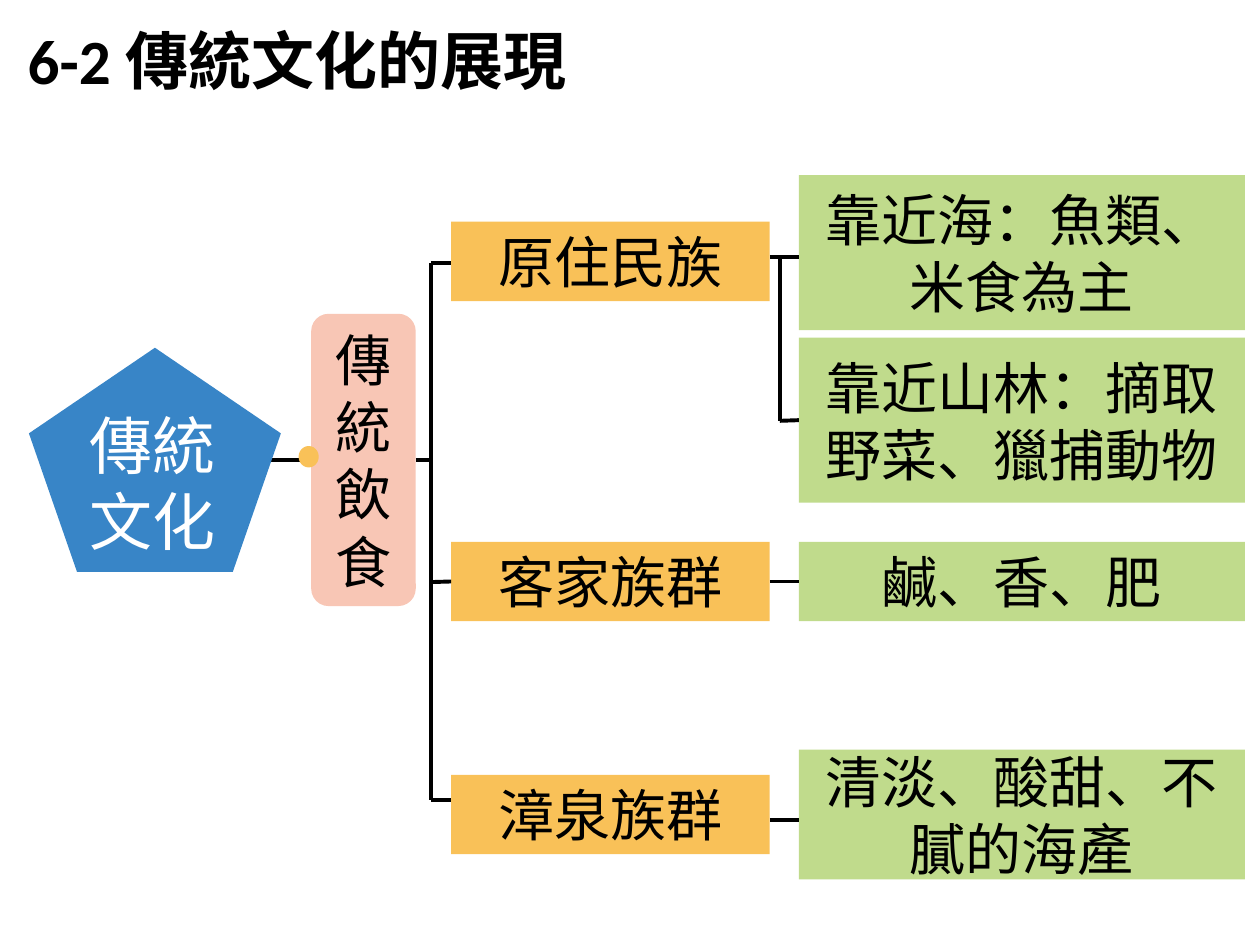
from dataclasses import dataclass

from lxml import etree
from pptx import Presentation
from pptx.dml.color import RGBColor as RGB
from pptx.enum.shapes import MSO_CONNECTOR as CONN, MSO_SHAPE as SHAPE
from pptx.enum.text import MSO_ANCHOR as ANCHOR, MSO_AUTO_SIZE as FIT, PP_ALIGN as ALIGN
from pptx.oxml.ns import qn
from pptx.util import Inches, Pt


@dataclass(frozen=True)
class Theme:
    black: str = "000000"
    white: str = "FFFFFF"
    blue: str = "3885C7"
    pink: str = "F8C6B5"
    orange: str = "F9C158"
    green: str = "C0DB8C"
    latin: str = "Calibri"
    cjk: str = "Noto Sans CJK SC"
    large: int = 36
    body: int = 32
    line: float = 2.25


T = Theme()


def add_text(sp, text, size=T.body, color=T.black, font=T.cjk, bold=False,
             align=ALIGN.CENTER, anchor=ANCHOR.MIDDLE):
    tf = sp.text_frame
    tf.vertical_anchor = anchor
    p = tf.paragraphs[0]
    p.alignment = align
    r = p.add_run()
    r.text = text
    r.font.size = Pt(size)
    r.font.bold = bold
    r.font.name = font
    r.font.color.rgb = RGB.from_string(color)
    latin = r.font._element.find(qn("a:latin"))
    ea = etree.Element(qn("a:ea"), typeface=T.cjk)
    latin.addnext(ea)


def add_line(x1, y1, x2, y2, begin=None, end=None):
    c = s.shapes.add_connector(CONN.STRAIGHT, Inches(x1), Inches(y1), Inches(x2), Inches(y2))
    c.line.color.rgb = RGB.from_string(T.black)
    c.line.width = Pt(T.line)
    etree.SubElement(c._element.spPr, qn("a:effectLst"))
    if begin is not None:
        c.begin_connect(begin, 3)
    if end is not None:
        c.end_connect(end, 1)


prs = Presentation()
prs.slide_width, prs.slide_height = Inches(10), Inches(7.5)
s = prs.slides.add_slide(prs.slide_layouts[5])

title = s.shapes.title
title.left, title.top = Inches(0.12), Inches(0.12)
title.width, title.height = Inches(4.6), Inches(0.71)
title.text_frame.word_wrap = False
title.text_frame.auto_size = FIT.SHAPE_TO_FIT_TEXT
for text, font in (("6-2 ", T.latin), ("傳統文化的展現", T.cjk)):
    add_text(title, text, size=T.large, font=font, bold=True, align=ALIGN.LEFT, anchor=ANCHOR.TOP)

group_x, group_w, group_h = 3.58, 2.53, 0.63
detail_x, detail_w = 6.34, 3.54
boxes = {}
for text, x, y, w, h, kind, fill in (
    ("傳統飲食", 2.47, 2.49, 0.83, 2.32, SHAPE.ROUNDED_RECTANGLE, T.pink),
    ("原住民族", group_x, 1.76, group_w, group_h, SHAPE.RECTANGLE, T.orange),
    ("客家族群", group_x, 4.3, group_w, group_h, SHAPE.RECTANGLE, T.orange),
    ("漳泉族群", group_x, 6.15, group_w, group_h, SHAPE.RECTANGLE, T.orange),
    ("靠近海：魚類、米食為主", detail_x, 1.39, detail_w, 1.23, SHAPE.RECTANGLE, T.green),
    ("靠近山林：摘取野菜、獵捕動物", detail_x, 2.68, detail_w, 1.31, SHAPE.RECTANGLE, T.green),
    ("鹹、香、肥", detail_x, 4.3, detail_w, group_h, SHAPE.RECTANGLE, T.green),
    ("清淡、酸甜、不膩的海產", detail_x, 5.95, detail_w, 1.03, SHAPE.RECTANGLE, T.green),
):
    sp = s.shapes.add_shape(kind, Inches(x), Inches(y), Inches(w), Inches(h))
    sp.shadow.inherit = False
    sp.fill.solid()
    sp.fill.fore_color.rgb = RGB.from_string(fill)
    sp.line.fill.background()
    add_text(sp, text)
    boxes[text] = sp

food, hakka = boxes["傳統飲食"], boxes["客家族群"]
trunk_x, branch_x, group_right = 3.42, 6.19, group_x + group_w
add_line(2.03, 3.65, 2.47, 3.65, end=food)
add_line(3.3, 3.65, trunk_x, 3.65, begin=food)
add_line(trunk_x, 2.09, trunk_x, 6.35)
add_line(trunk_x, 2.09, group_x, 2.09)
add_line(trunk_x, 4.62, group_x, 4.62, end=hakka)
add_line(trunk_x, 6.35, group_x, 6.35)
add_line(group_right, 2.04, detail_x, 2.04)
add_line(branch_x, 2.04, branch_x, 3.34)
add_line(branch_x, 3.34, detail_x, 3.34, end=boxes["靠近山林：摘取野菜、獵捕動物"])
add_line(group_right, 4.62, detail_x, 4.62, begin=hakka, end=boxes["鹹、香、肥"])
add_line(group_right, 6.51, detail_x, 6.51)

for kind, x, y, w, h, fill in (
    (SHAPE.OVAL, 2.37, 3.54, 0.16, 0.17, T.orange),
    (SHAPE.REGULAR_PENTAGON, 0.23, 2.76, 2, 1.78, T.blue),
):
    sp = s.shapes.add_shape(kind, Inches(x), Inches(y), Inches(w), Inches(h))
    sp.shadow.inherit = False
    sp.fill.solid()
    sp.fill.fore_color.rgb = RGB.from_string(fill)
    sp.line.fill.background()
add_text(sp, "傳統文化", size=T.large, color=T.white, align=ALIGN.LEFT, anchor=ANCHOR.TOP)

prs.save("out.pptx")
